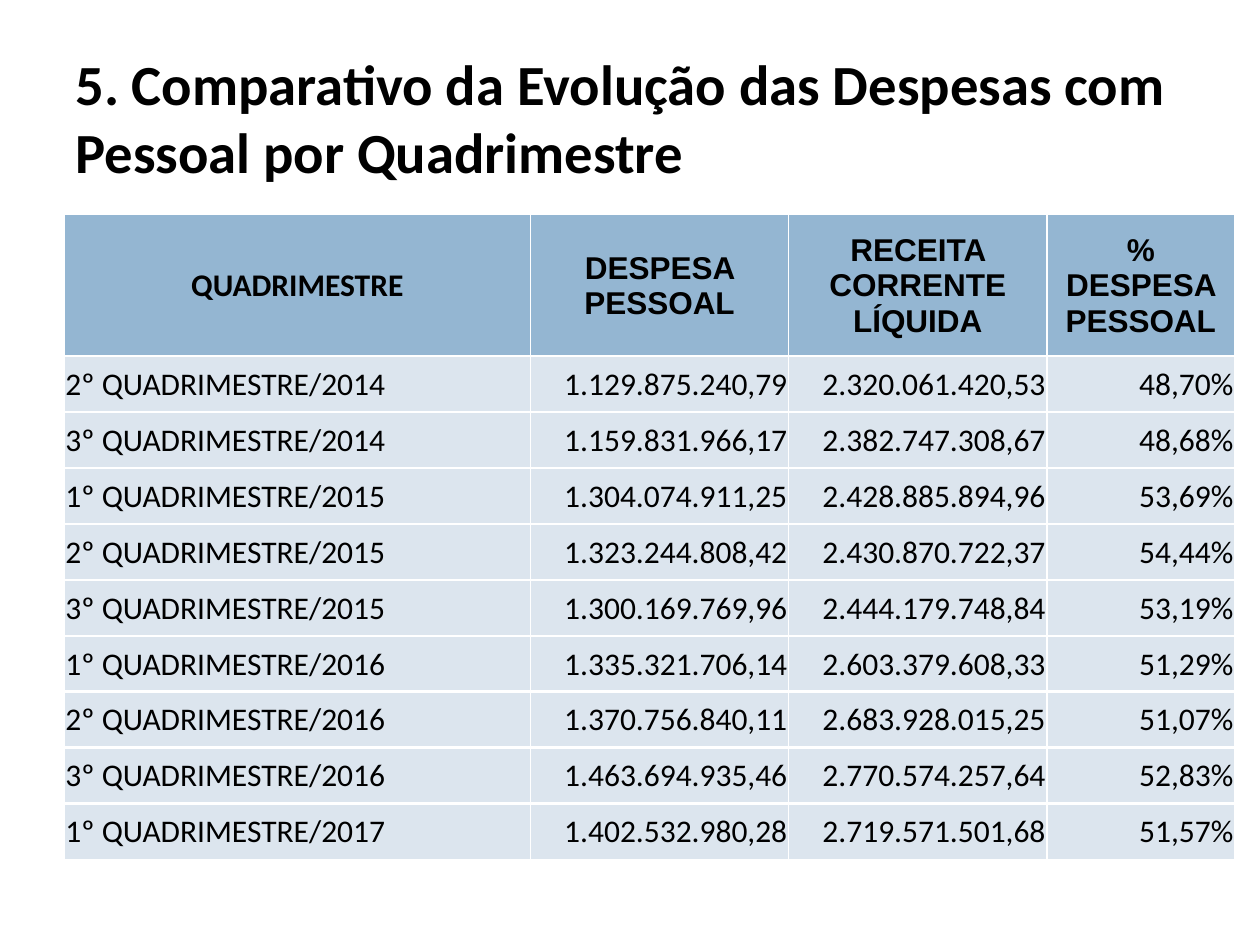
from lxml.etree import SubElement
from pptx import Presentation
from pptx.dml.color import RGBColor
from pptx.enum.text import MSO_ANCHOR, PP_ALIGN
from pptx.oxml.ns import qn
from pptx.util import Inches, Pt

BLACK = RGBColor(0x00, 0x00, 0x00)
WHITE = RGBColor(0xFF, 0xFF, 0xFF)
HEADER_BLUE = RGBColor(0x94, 0xB6, 0xD2)
BODY_BLUE = RGBColor(0xDC, 0xE5, 0xEE)

TITLE = "5. Comparativo da Evolução das Despesas com Pessoal por Quadrimestre"
HEADERS = ["QUADRIMESTRE", "DESPESA PESSOAL", "RECEITA CORRENTE LÍQUIDA", "% DESPESA PESSOAL"]
EXPENSES = [
    ("2º QUADRIMESTRE/2014", "1.129.875.240,79", "2.320.061.420,53", "48,70%"),
    ("3º QUADRIMESTRE/2014", "1.159.831.966,17", "2.382.747.308,67", "48,68%"),
    ("1º QUADRIMESTRE/2015", "1.304.074.911,25", "2.428.885.894,96", "53,69%"),
    ("2º QUADRIMESTRE/2015", "1.323.244.808,42", "2.430.870.722,37", "54,44%"),
    ("3º QUADRIMESTRE/2015", "1.300.169.769,96", "2.444.179.748,84", "53,19%"),
    ("1º QUADRIMESTRE/2016", "1.335.321.706,14", "2.603.379.608,33", "51,29%"),
    ("2º QUADRIMESTRE/2016", "1.370.756.840,11", "2.683.928.015,25", "51,07%"),
    ("3º QUADRIMESTRE/2016", "1.463.694.935,46", "2.770.574.257,64", "52,83%"),
    ("1º QUADRIMESTRE/2017", "1.402.532.980,28", "2.719.571.501,68", "51,57%"),
]
COLUMN_SHARES = (3.7, 2.05, 2.05, 1.49)
HEADER_SHARE = 0.22


def add_run(paragraph, text, size, font="Calibri", bold=False):
    run = paragraph.add_run()
    run.text = text
    run.font.name = font
    run.font.size = Pt(size)
    run.font.bold = bold
    run.font.color.rgb = BLACK


def add_title(slide, left, top, width, height):
    frame = slide.shapes.add_textbox(left, top, width, height).text_frame
    frame.word_wrap = True
    frame.vertical_anchor = MSO_ANCHOR.MIDDLE
    add_run(frame.paragraphs[0], TITLE, 32.4, bold=True)


def set_borders(cell, **widths):
    """Draw white borders; widths in points, keyed L, R, T, B in schema order."""
    properties = cell._tc.get_or_add_tcPr()
    for side, width in widths.items():
        line = SubElement(properties, qn(f"a:ln{side}"), w=str(Pt(width)))
        fill = SubElement(line, qn("a:solidFill"))
        SubElement(fill, qn("a:srgbClr"), val=str(WHITE))


def fill_cell(cell, text, color, alignment, font="Calibri", bold=False):
    cell.fill.solid()
    cell.fill.fore_color.rgb = color
    cell.vertical_anchor = MSO_ANCHOR.MIDDLE
    cell.margin_left = cell.margin_right = cell.margin_top = Inches(0.01)
    cell.margin_bottom = 0
    paragraph = cell.text_frame.paragraphs[0]
    paragraph.alignment = alignment
    add_run(paragraph, text, 18, font, bold)


def add_expense_table(slide, left, top, width, height):
    rows = [HEADERS, *EXPENSES]
    last = len(rows) - 1
    table = slide.shapes.add_table(len(rows), len(HEADERS), left, top, width, height).table
    for column, share in zip(table.columns, COLUMN_SHARES):
        column.width = int(width * share / sum(COLUMN_SHARES))
    header_height = int(height * HEADER_SHARE)
    for i, values in enumerate(rows):
        table.rows[i].height = header_height if i == 0 else (height - header_height) // last
        for j, text in enumerate(values):
            cell = table.cell(i, j)
            set_borders(cell, L=1, R=1, T=1 if i == 0 else 1.5, B=1 if i == last else 1.5)
            if i == 0:
                font = "Calibri" if j == 0 else "Arial"
                fill_cell(cell, text, HEADER_BLUE, PP_ALIGN.CENTER, font, bold=True)
            else:
                alignment = PP_ALIGN.LEFT if j == 0 else PP_ALIGN.RIGHT
                fill_cell(cell, text, BODY_BLUE, alignment)


def main():
    presentation = Presentation()
    presentation.slide_width = Inches(10)
    presentation.slide_height = Inches(7.5)
    slide = presentation.slides.add_slide(presentation.slide_layouts[6])
    add_title(slide, Inches(0.5), Inches(0.3), Inches(9), Inches(1.25))
    add_expense_table(slide, Inches(0.51), Inches(1.7), Inches(9.29), Inches(5.12))
    presentation.save("out.pptx")


if __name__ == "__main__":
    main()
